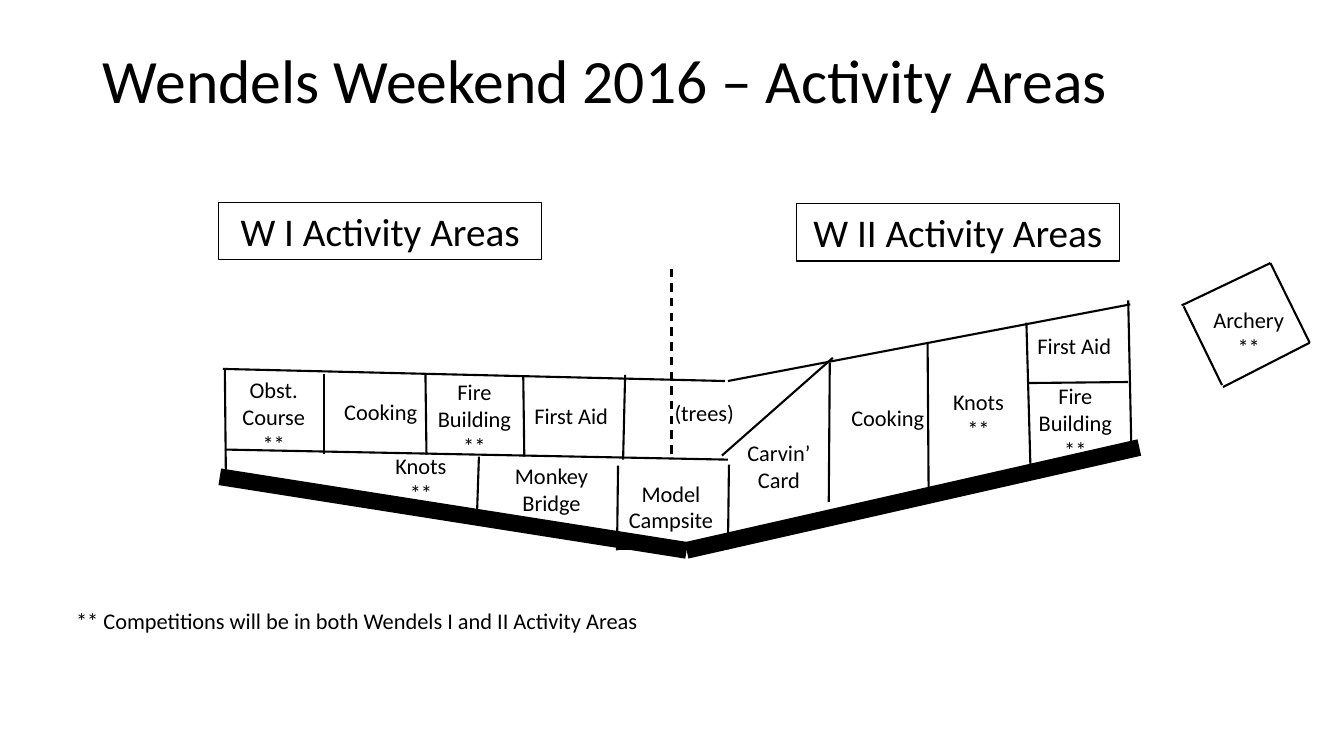
from lxml import etree
from pptx import Presentation
from pptx.dml.color import RGBColor
from pptx.enum import dml, shapes, text
from pptx.oxml import ns
from pptx.util import Inches, Pt

BLACK = "000000"
FONT = "Calibri"

# Walls: start x, start y, end x, end y
SITE_EDGES = [
    (7.22, 3.78, 11.21, 3.02),
    (7.19, 3.78, 2.21, 3.66),
]
ROADS = [
    (6.81, 5.46, 2.18, 4.73),
    (6.81, 5.46, 11.3, 4.44),
]
AREA_1_WALLS = [
    (2.24, 4.66, 2.23, 3.67),
    (3.21, 4.5, 3.21, 3.71),
    (4.23, 4.51, 4.22, 3.72),
    (5.2, 4.53, 5.19, 3.74),
    (6.18, 4.56, 6.2, 3.72),
    (7.22, 4.56, 2.23, 4.46),
    (4.73, 5.13, 4.75, 4.53),
    (6.12, 5.46, 6.13, 4.62),
    (7.22, 5.45, 7.23, 4.61),
    (7.21, 5.45, 6.11, 5.45),
]
AREA_2_WALLS = [
    (7.16, 4.52, 8.26, 3.55),
    (8.22, 4.98, 8.23, 3.6),
    (9.21, 4.83, 9.2, 3.4),
    (10.22, 4.62, 10.18, 3.2),
    (11.22, 4.39, 11.19, 2.98),
    (11.19, 3.79, 10.2, 3.8),
]
ARCHERY_WALLS = [
    (12.99, 3.4, 12.6, 2.61),
    (12.12, 3.82, 11.74, 3.04),
    (12.99, 3.4, 12.13, 3.84),
    (12.6, 2.61, 11.72, 3.03),
]
# Labels: paragraphs, left, top, width, height
LABELS = [
    (["Obst. Course", "**"], 2.11, 3.68, 1.21, 0.91),
    (["Cooking"], 3.25, 3.9, 1.05, 0.37),
    (["Fire Building", "**"], 4.18, 3.7, 1.05, 0.91),
    (["First Aid"], 5.14, 3.94, 1.05, 0.37),
    (["Knots", "**"], 3.65, 4.44, 1.05, 0.64),
    (["Monkey Bridge"], 4.71, 4.54, 1.52, 0.64),
    (["Model Campsite"], 5.9, 4.71, 1.51, 0.64),
    (["(trees)"], 6.46, 3.91, 1.05, 0.37),
    (["Carvin’ Card"], 7.2, 4.31, 1.05, 0.64),
    (["Cooking"], 8.28, 3.96, 1.05, 0.37),
    (["Knots", "**"], 9.18, 3.8, 1.05, 0.64),
    (["First Aid"], 10.13, 3.25, 1.05, 0.37),
    (["Fire Building", "**"], 10.14, 3.74, 1.05, 0.91),
    (["Archery", "**"], 11.63, 2.99, 1.51, 0.64),
    (["** Competitions will be in both Wendels I and II Activity Areas"],
     0.41, 5.97, 6.26, 0.37),
]


def color(value):
    return RGBColor.from_string(value)


def write(frame, lines, size, align=text.PP_ALIGN.CENTER,
          anchor=text.MSO_ANCHOR.TOP, spacing=1.0):
    """Fill a text frame with one paragraph per line."""
    settings = {"word_wrap": True, "auto_size": text.MSO_AUTO_SIZE.NONE,
                "vertical_anchor": anchor}
    for name, value in settings.items():
        setattr(frame, name, value)
    for index, line in enumerate(lines):
        para = frame.add_paragraph() if index else frame.paragraphs[0]
        para.alignment = align
        para.line_spacing = spacing
        span = para.add_run()
        span.text = line
        for name, value in {"name": FONT, "size": Pt(size)}.items():
            setattr(span.font, name, value)
        span.font.color.rgb = color(BLACK)


def add_title(page, words):
    title = page.shapes.title
    place = {"left": 0.92, "top": 0.4, "width": 11.5, "height": 0.86}
    for name, value in place.items():
        setattr(title, name, Inches(value))
    write(title.text_frame, [words], 44, text.PP_ALIGN.LEFT,
          text.MSO_ANCHOR.MIDDLE, 0.9)


def add_heading(page, words, left, top):
    box = page.shapes.add_shape(shapes.MSO_SHAPE.RECTANGLE, Inches(left),
                                Inches(top), Inches(3.2), Inches(0.57))
    box.shadow.inherit = False
    box.fill.background()
    box.line.color.rgb = color(BLACK)
    box.line.width = Pt(0.75)
    write(box.text_frame, [words], 28)


def add_label(page, lines, *place):
    box = page.shapes.add_textbox(*map(Inches, place))
    write(box.text_frame, lines, 16)


def add_wall(parent, ends, width=1.5, dash=None):
    wall = parent.shapes.add_connector(shapes.MSO_CONNECTOR.STRAIGHT,
                                       *map(Inches, ends))
    wall.line.color.rgb = color(BLACK)
    wall.line.width = Pt(width)
    if dash:
        wall.line.dash_style = dash
    etree.SubElement(wall.element.spPr, ns.qn("a:effectLst"))


def main():
    deck = Presentation()
    deck.slide_width, deck.slide_height = Inches(13.33), Inches(7.5)
    page = deck.slides.add_slide(deck.slide_layouts[5])

    add_title(page, "Wendels Weekend 2016 – Activity Areas")
    add_heading(page, "W I Activity Areas", 2.17, 2.01)
    add_heading(page, "W II Activity Areas", 7.9, 2.02)

    for ends in SITE_EDGES + AREA_1_WALLS + AREA_2_WALLS:
        add_wall(page, ends)
    for ends in ROADS:
        add_wall(page, ends, width=12)
    add_wall(page, (6.66, 4.5, 6.66, 2.64), dash=dml.MSO_LINE.DASH)

    archery = page.shapes.add_group_shape()
    for ends in ARCHERY_WALLS:
        add_wall(archery, ends)

    for label in LABELS:
        add_label(page, *label)
    deck.save("out.pptx")


if __name__ == "__main__":
    main()
